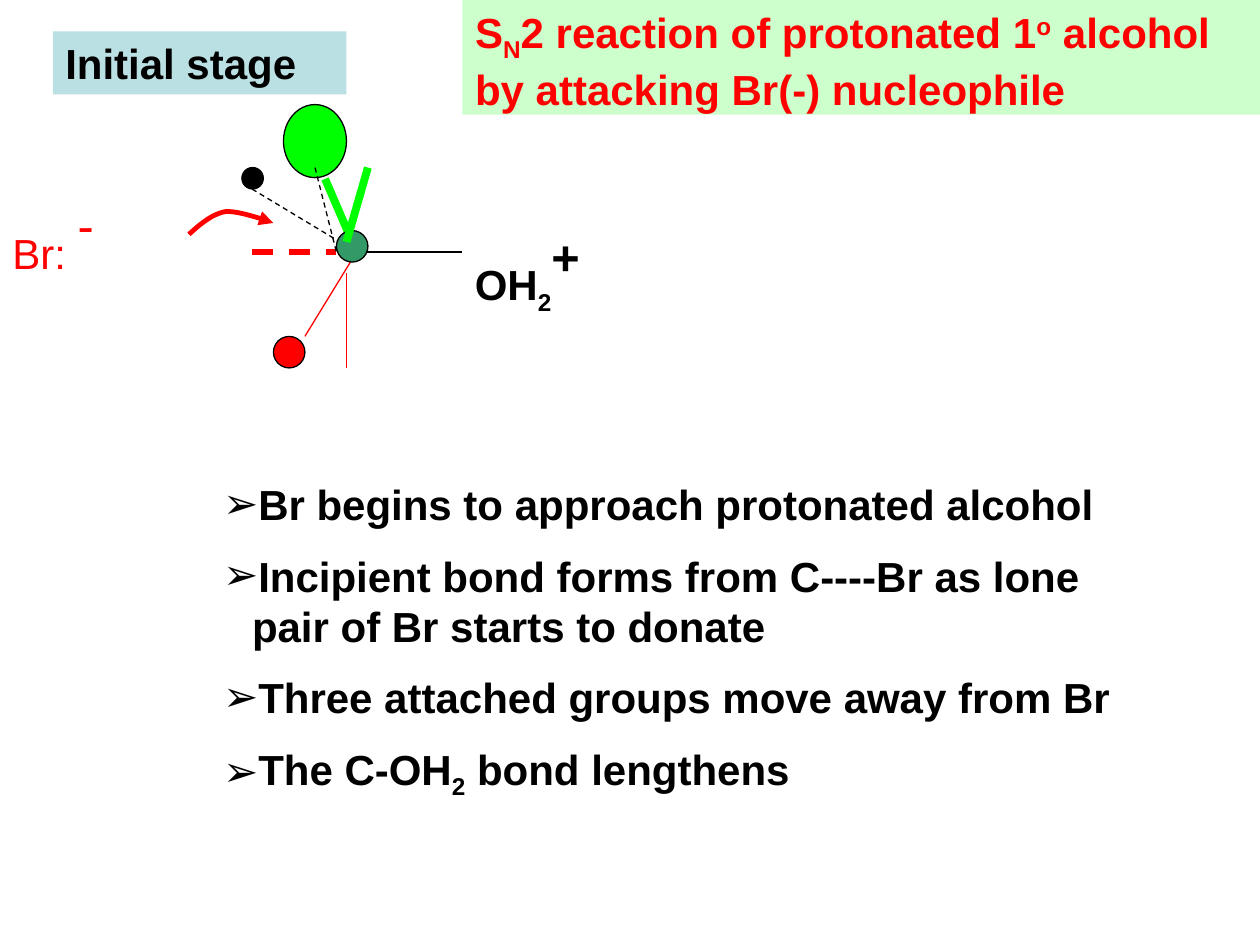
from dataclasses import dataclass
from typing import NamedTuple

from lxml.etree import SubElement
from pptx import Presentation
from pptx.dml.color import RGBColor
from pptx.enum.dml import MSO_LINE
from pptx.enum.shapes import MSO_CONNECTOR, MSO_SHAPE
from pptx.enum.text import MSO_ANCHOR, MSO_AUTO_SIZE, PP_ALIGN
from pptx.oxml.ns import qn
from pptx.util import Inches, Pt


@dataclass(frozen=True)
class Theme:
    font: str = "Arial"
    size: int = 24
    charge: int = 48
    gap: int = 12
    thin: float = 0.75
    arrow: float = 2.75
    dash: float = 3
    wedge: float = 4.5
    sub: int = -25
    sup: int = 30
    black: str = "000000"
    red: str = "FF0000"
    green: str = "00FF00"
    teal: str = "339966"
    mint: str = "CCFFCC"
    blue: str = "BBE0E3"


T = Theme()


class Bit(NamedTuple):
    text: str
    base: int = 0
    size: int = T.size


class Bond(NamedTuple):
    start: tuple
    end: tuple
    color: str = T.black
    width: float = T.thin
    dashed: bool = False


class Ball(NamedTuple):
    x: float
    y: float
    w: float
    h: float
    color: str


HUB = (2.83, 2)
BACK = [
    Bond((2, 1.5), HUB, dashed=True),
    Bond(HUB, (2.42, 2.67), T.red),
    Bond(HUB, (2.58, 1.42), T.green, T.wedge),
    Bond(HUB, (3.67, 2)),
]
FRONT = [
    Bond((2, 2), (2.67, 2), T.red, T.dash, True),
    Bond((2.75, 1.92), (2.92, 1.33), T.green, T.wedge),
    Bond((2.75, 2.17), (2.75, 2.92), T.red),
    Bond((2.5, 1.33), (2.67, 2), dashed=True),
]
BALLS = [
    Ball(2.17, 2.67, 0.25, 0.25, T.red),
    Ball(1.92, 1.33, 0.17, 0.17, T.black),
    Ball(2.25, 0.83, 0.5, 0.58, T.green),
    Ball(2.67, 1.83, 0.25, 0.25, T.teal),
]
CURVES = [
    ((1.5, 1.86), (1.59, 1.78), (1.68, 1.7), (1.79, 1.68)),
    ((1.79, 1.68), (1.9, 1.67), (2.17, 1.77), (2.17, 1.77)),
]
TITLE = [Bit("S"), Bit("N", T.sub), Bit("2 reaction of protonated 1"),
         Bit("o", T.sup), Bit(" alcohol by attacking Br(-) nucleophile")]
POINTS = [
    [Bit("Br begins to approach protonated alcohol")],
    [Bit("Incipient bond forms from C----Br as lone pair of Br starts to donate")],
    [Bit("Three attached groups move away from Br")],
    [Bit("The C-OH"), Bit("2", T.sub), Bit(" bond lengthens")],
]


def rgb(color: str) -> RGBColor:
    return RGBColor.from_string(color)


def place(shape, x: float, y: float, w: float, h: float) -> None:
    shape.left, shape.top = Inches(x), Inches(y)
    shape.width, shape.height = Inches(w), Inches(h)


def write(shape, rows: list, color: str, bold: bool = True, mark: str = "") -> None:
    frame = shape.text_frame
    frame.word_wrap = True
    frame.auto_size = MSO_AUTO_SIZE.NONE
    frame.vertical_anchor = MSO_ANCHOR.TOP
    for i, row in enumerate(rows):
        para = frame.add_paragraph() if i else frame.paragraphs[0]
        para.alignment = PP_ALIGN.LEFT
        para.space_before = Pt(T.gap if i else 0)
        if mark:
            props = para._p.get_or_add_pPr()
            props.set("marL", str(Inches(0.23)))
            props.set("indent", str(-Inches(0.23)))
            SubElement(props, qn("a:buChar")).set("char", mark)
        for bit in row:
            run = para.add_run()
            run.text = bit.text
            run.font.name = T.font
            run.font.size = Pt(bit.size)
            run.font.bold = bold
            run.font.color.rgb = rgb(color)
            if bit.base:
                run._r.get_or_add_rPr().set("baseline", str(bit.base * 1000))


def paint(shape, color: str) -> None:
    shape.fill.solid()
    shape.fill.fore_color.rgb = rgb(color)


def stroke(shape, color: str, width: float) -> None:
    shape.line.color.rgb = rgb(color)
    shape.line.width = Pt(width)


def label(slide, spot: tuple, row: list, color: str, bold: bool = True):
    box = slide.shapes.add_textbox(*map(Inches, spot))
    write(box, [row], color, bold)
    return box


def link(slide, bond: Bond) -> None:
    line = slide.shapes.add_connector(
        MSO_CONNECTOR.STRAIGHT, *map(Inches, bond.start + bond.end))
    stroke(line, bond.color, bond.width)
    if bond.dashed:
        line.line.dash_style = MSO_LINE.DASH
    SubElement(line._element.spPr, qn("a:effectLst"))


def draw(slide, ball: Ball) -> None:
    oval = slide.shapes.add_shape(MSO_SHAPE.OVAL, *map(Inches, ball[:4]))
    oval.shadow.inherit = False
    paint(oval, ball.color)
    stroke(oval, T.black, T.thin)


def trace(curve: tuple, steps: int = 12) -> list:
    dots = []
    for i in range(1, steps + 1):
        t = i / steps
        parts = ((1 - t) ** 3, 3 * t * (1 - t) ** 2, 3 * t * t * (1 - t), t ** 3)
        dots.append(tuple(Inches(sum(p * c for p, c in zip(parts, axis)))
                          for axis in zip(*curve)))
    return dots


def attack(slide) -> None:
    pen = slide.shapes.build_freeform(*map(Inches, CURVES[0][0]))
    pen.add_line_segments([dot for curve in CURVES for dot in trace(curve)],
                          close=False)
    arc = pen.convert_to_shape()
    arc.shadow.inherit = False
    arc.fill.background()
    stroke(arc, T.red, T.arrow)
    SubElement(arc.line._get_or_add_ln(), qn("a:tailEnd")).set("type", "triangle")


def main() -> None:
    deck = Presentation()
    deck.slide_width, deck.slide_height = Inches(10), Inches(7.5)
    slide = deck.slides.add_slide(deck.slide_layouts[1])
    title, body = slide.placeholders
    place(title, 3.67, 0, 6.33, 0.91)
    paint(title, T.mint)
    write(title, [TITLE], T.red)
    place(body, 1.67, 3.75, 7.25, 3.03)
    write(body, POINTS, T.black, mark="➢")
    for bond in BACK:
        link(slide, bond)
    label(slide, (0, 1.42, 1, 0.9),
          [Bit("Br: "), Bit("-", T.sup, T.charge)], T.red, False)
    label(slide, (3.67, 1.67, 1.25, 0.63),
          [Bit("OH"), Bit("2", T.sub), Bit("+", T.sup, T.charge)], T.black)
    stage = label(slide, (0.42, 0.25, 2.33, 0.5), [Bit("Initial stage")], T.black)
    paint(stage, T.blue)
    for ball in BALLS:
        draw(slide, ball)
    for bond in FRONT:
        link(slide, bond)
    attack(slide)
    deck.save("out.pptx")


if __name__ == "__main__":
    main()
